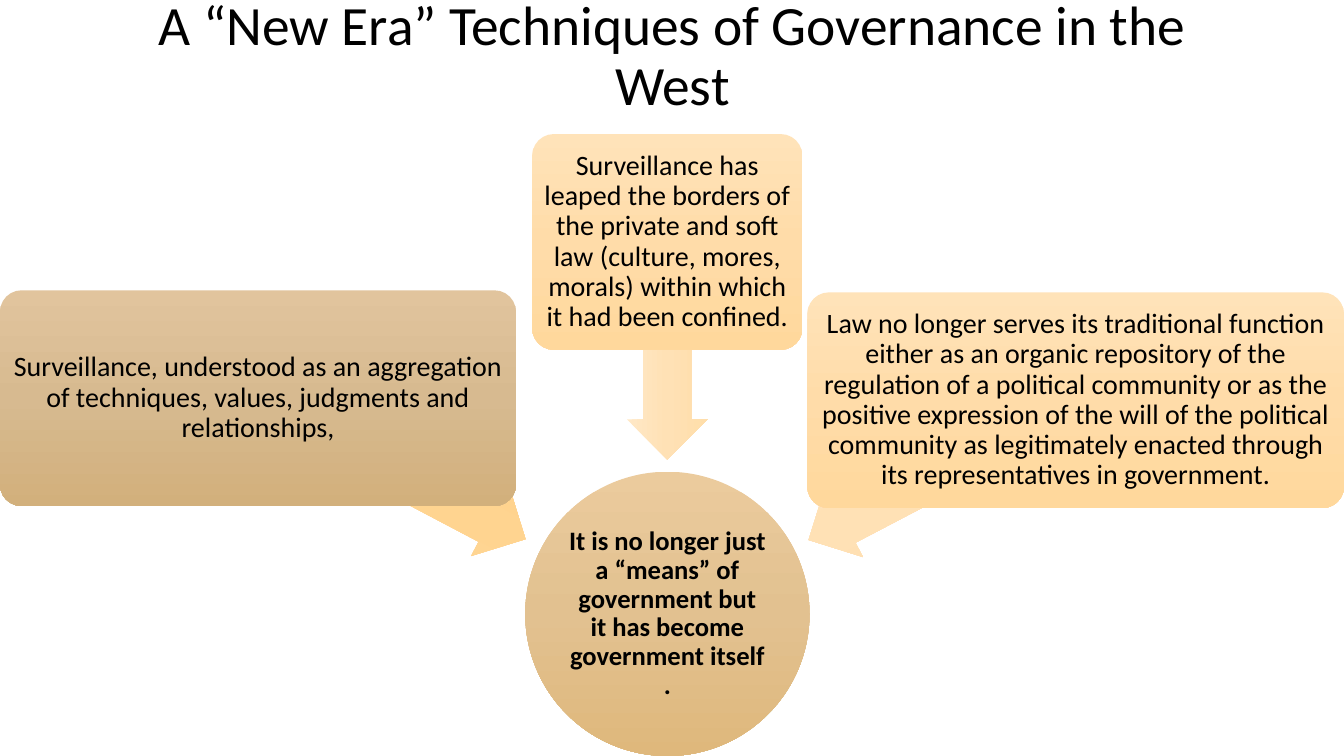
import copy
import math
from dataclasses import dataclass

from pptx import Presentation, util as u
from pptx.dml.color import RGBColor
from pptx.enum import shapes, text


@dataclass(frozen=True)
class Theme:
    font: str = "Calibri"
    ink: str = "000000"
    title_size: float = 39.6
    card_size: float = 20
    circle_size: float = 19
    line_spacing: float = 0.9
    circle: tuple = ("EBCB9D", "E2C190", "DFB87C")
    tan_card: tuple = ("E1C49D", "D7BA90", "D2B07C")
    pale_card: tuple = ("FFE3B9", "FFDCA9", "FFD89C")
    deep_arrow: tuple = ("FFD99E", "FFD490", "FFCE7C")
    pale_arrow: tuple = ("FFE8C6", "FFE1B5", "FFDEAA")


THEME = Theme()
WIDTH, HEIGHT = u.Inches(13.333), u.Inches(7.5)
COLUMN, ROW = WIDTH / 100, HEIGHT / 100

# Boxes are left, top, width and height in hundredths of the slide
TITLE_BOX = (6.9, 0, 86.25, 15.33)
CIRCLE_BOX = (39.08, 62.4, 21.15, 37.6)
CARD_HEIGHT = 28.53
ARROW_HEIGHT = 10.67

TITLE = "A “New Era” Techniques of Governance in the West"
CONCLUSION = ("It is no longer just a “means” of government "
              "but it has become government itself .")

# Card box, arrow length in columns, card colours, arrow colours, wording
CAUSES = [
    ((0, 38.4, 38.4, CARD_HEIGHT), 22.5, THEME.tan_card, THEME.deep_arrow,
     "Surveillance, understood as an aggregation of techniques, values, "
     "judgments and relationships,"),
    ((39.6, 17.73, 20.1, CARD_HEIGHT), 16.2, THEME.pale_card, THEME.pale_arrow,
     "Surveillance has leaped the borders of the private and soft law "
     "(culture, mores, morals) within which it had been confined."),
    ((60.07, 38.67, 39.93, CARD_HEIGHT), 22.43, THEME.pale_card, THEME.pale_arrow,
     "Law no longer serves its traditional function either as an organic "
     "repository of the regulation of a political community or as the positive "
     "expression of the will of the political community as legitimately enacted "
     "through its representatives in government."),
]


def place(box):
    left, top, width, height = box
    return [round(length) for length in
            (left * COLUMN, top * ROW, width * COLUMN, height * ROW)]


def center(box):
    left, top, width, height = place(box)
    return left + width / 2, top + height / 2


def write(shape, wording, size, bold=False):
    frame = shape.text_frame
    frame.text = wording
    frame.word_wrap = True
    frame.auto_size = text.MSO_AUTO_SIZE.NONE
    frame.vertical_anchor = text.MSO_ANCHOR.MIDDLE
    paragraph = frame.paragraphs[0]
    paragraph.alignment = text.PP_ALIGN.CENTER
    paragraph.line_spacing = THEME.line_spacing
    font = paragraph.runs[0].font
    font.name, font.size, font.bold = THEME.font, u.Pt(size), bold
    font.color.rgb = RGBColor.from_string(THEME.ink)


def set_margins(shape, inches):
    frame = shape.text_frame
    frame.margin_left = frame.margin_right = u.Inches(inches)
    frame.margin_top = frame.margin_bottom = u.Inches(inches)


def add_shaded(slide, kind, position, colors):
    """Add a borderless shape shaded from top to bottom."""
    shape = slide.shapes.add_shape(kind, *position)
    shape.shadow.inherit = False
    shape.line.fill.background()
    shape.fill.gradient()
    shape.fill.gradient_angle = 270
    # A new gradient has two stops; the middle one is added between them
    first = shape.fill.gradient_stops[0]._gs
    first.addnext(copy.deepcopy(first))
    for stop, position, color in zip(shape.fill.gradient_stops, (0, 0.5, 1), colors):
        stop.position = position
        stop.color.rgb = RGBColor.from_string(color)
    return shape


def add_title(slide, box):
    title = slide.shapes.title
    title.left, title.top, title.width, title.height = place(box)
    write(title, TITLE, THEME.title_size)


def add_circle(slide, box):
    circle = add_shaded(slide, shapes.MSO_SHAPE.OVAL, place(box), THEME.circle)
    set_margins(circle, 0.01)
    write(circle, CONCLUSION, THEME.circle_size, bold=True)


def add_arrow(slide, start_box, target_box, columns, colors):
    """Add an arrow from the centre of one box towards another's."""
    (x, y), (target_x, target_y) = center(start_box), center(target_box)
    angle = math.atan2(target_y - y, target_x - x)
    length, height = columns * COLUMN, ARROW_HEIGHT * ROW
    left = x + math.cos(angle) * length / 2 - length / 2
    top = y + math.sin(angle) * length / 2 - height / 2
    position = [round(value) for value in (left, top, length, height)]
    arrow = add_shaded(slide, shapes.MSO_SHAPE.LEFT_ARROW, position, colors)
    arrow.adjustments[0], arrow.adjustments[1] = 0.6, 0.5
    arrow.rotation = math.degrees(angle) + 180


def add_card(slide, box, colors, wording):
    card = add_shaded(slide, shapes.MSO_SHAPE.ROUNDED_RECTANGLE, place(box), colors)
    card.adjustments[0] = 0.1
    set_margins(card, 0.04)
    write(card, wording, THEME.card_size)


def main():
    presentation = Presentation()
    presentation.slide_width, presentation.slide_height = WIDTH, HEIGHT
    slide = presentation.slides.add_slide(presentation.slide_layouts[5])

    # Title, then the conclusion the causes point to
    add_title(slide, TITLE_BOX)
    add_circle(slide, CIRCLE_BOX)

    # Each card covers the tail of its arrow
    for box, arrow_columns, card_colors, arrow_colors, wording in CAUSES:
        add_arrow(slide, box, CIRCLE_BOX, arrow_columns, arrow_colors)
        add_card(slide, box, card_colors, wording)

    presentation.save("out.pptx")


if __name__ == "__main__":
    main()
